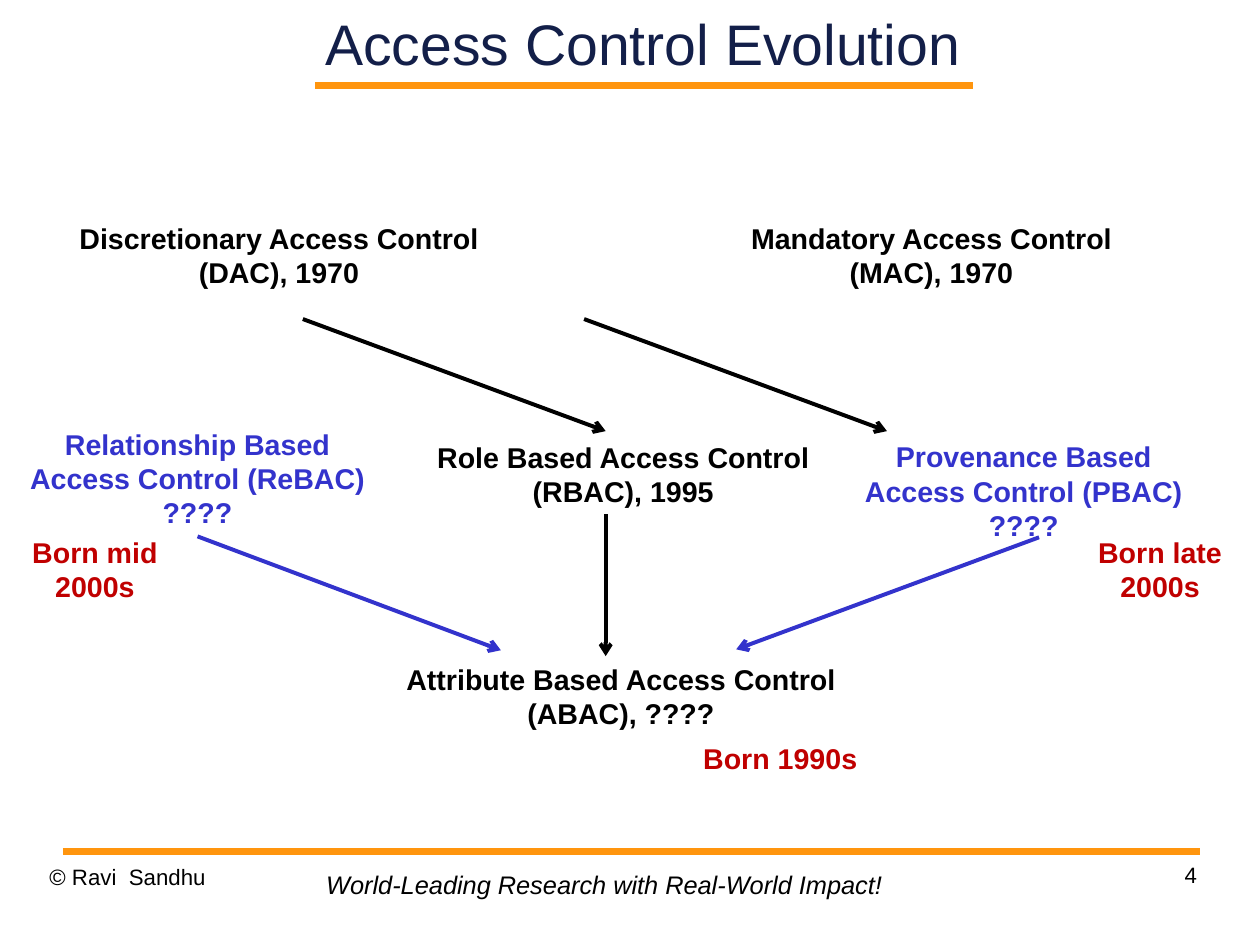
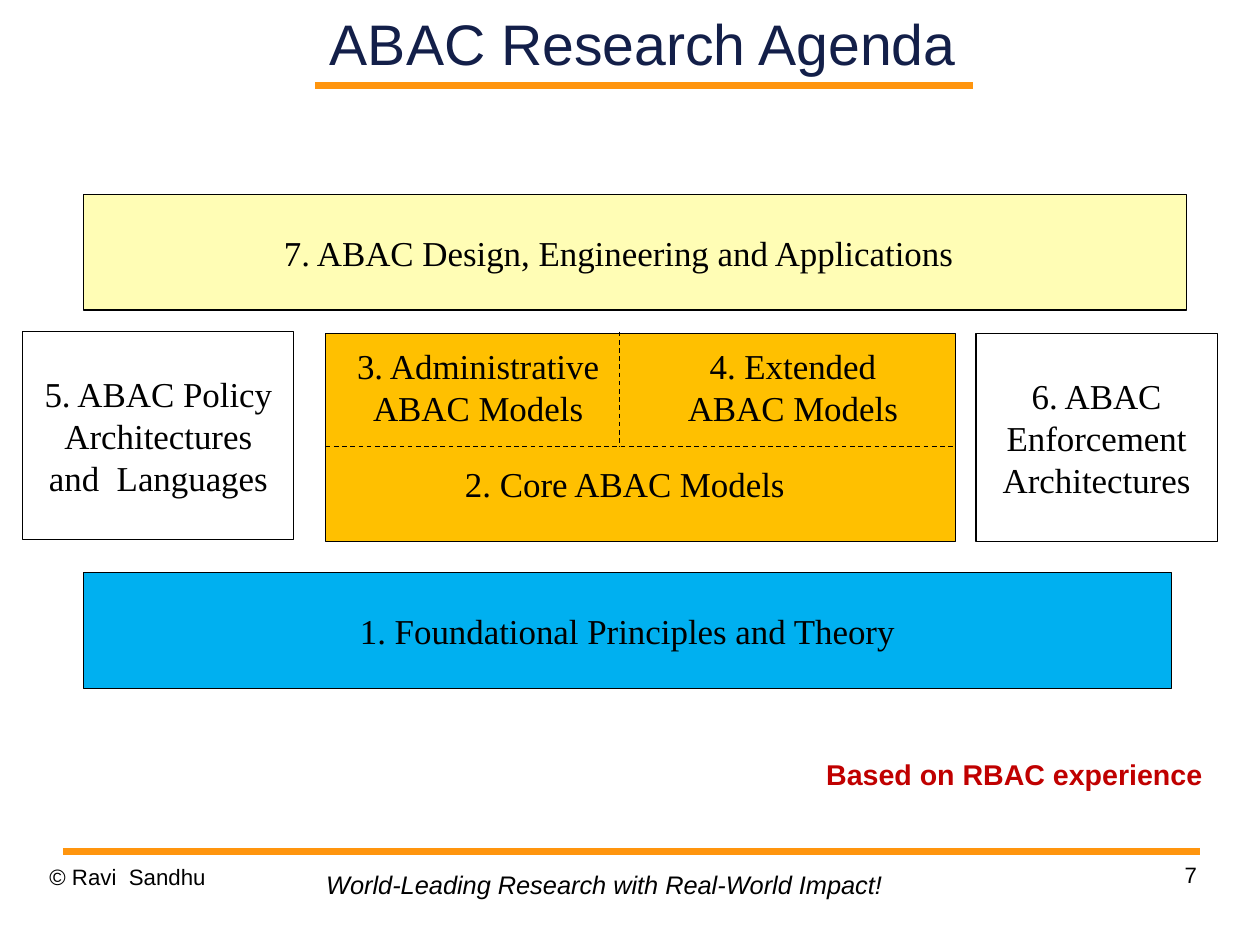
import dataclasses

import pptx
import pptx.dml.color
import pptx.enum.dml
import pptx.enum.shapes
import pptx.enum.text
import pptx.oxml.ns
import pptx.oxml.xmlchemy
import pptx.util

Cm = pptx.util.Cm
ALIGN = pptx.enum.text.PP_ALIGN
ANCHOR = pptx.enum.text.MSO_ANCHOR


@dataclasses.dataclass(frozen=True)
class TextStyle:
    size: float
    color: str = "000000"
    font: str = "Arial"
    bold: bool = False
    italic: bool = False


@dataclasses.dataclass(frozen=True)
class Theme:
    black: str = "000000"
    white: str = "FFFFFF"
    blue: str = "3333CC"
    orange: str = "FF950E"
    amber: str = "FFC000"
    sky: str = "00B0F0"
    cream: str = "FFFDB5"
    rule_width: float = 4.31
    arrow_width: float = 2.5
    border_width: float = 0.75
    title: TextStyle = TextStyle(36, "131F49")
    footer: TextStyle = TextStyle(14)
    tagline: TextStyle = TextStyle(16, italic=True)
    model: TextStyle = TextStyle(18, bold=True)
    emerging: TextStyle = TextStyle(18, "3333CC", bold=True)
    note: TextStyle = TextStyle(18, "C00000", bold=True)
    block: TextStyle = TextStyle(22, font="Times New Roman")


THEME = Theme()
NO_INSETS = (0, 0, 0, 0)
TEXT_INSETS = (0.25, 0.13, 0.25, 0.13)
BLOCK_INSETS = (0.38, 0.15, 0.38, 0.15)


def rgb(color):
    return pptx.dml.color.RGBColor.from_string(color)


def write_text(shape, lines, style, align, anchor, insets):
    """Fill a shape with one paragraph per line; insets are left, top, right, bottom in cm."""
    frame = shape.text_frame
    frame.word_wrap = True
    frame.auto_size = pptx.enum.text.MSO_AUTO_SIZE.NONE
    frame.vertical_anchor = anchor
    (frame.margin_left, frame.margin_top,
     frame.margin_right, frame.margin_bottom) = map(Cm, insets)
    for index, line in enumerate(lines):
        paragraph = frame.add_paragraph() if index else frame.paragraphs[0]
        paragraph.alignment = align
        run = paragraph.add_run()
        run.text = line
        font = run.font
        font.name = style.font
        font.size = pptx.util.Pt(style.size)
        font.bold = style.bold
        font.italic = style.italic
        font.color.rgb = rgb(style.color)


def add_text(slide, box, lines, style, align=ALIGN.CENTER, insets=TEXT_INSETS):
    shape = slide.shapes.add_textbox(*map(Cm, box))
    write_text(shape, lines, style, align, ANCHOR.TOP, insets)
    return shape


def add_block(slide, box, fill, lines=(), insets=BLOCK_INSETS):
    shape = slide.shapes.add_shape(
        pptx.enum.shapes.MSO_SHAPE.RECTANGLE, *map(Cm, box))
    shape.shadow.inherit = False
    shape.fill.solid()
    shape.fill.fore_color.rgb = rgb(fill)
    shape.line.color.rgb = rgb(THEME.black)
    shape.line.width = pptx.util.Pt(THEME.border_width)
    write_text(shape, lines, THEME.block, ALIGN.CENTER, ANCHOR.MIDDLE, insets)


def add_line(slide, start, end, color, width):
    connector = slide.shapes.add_connector(
        pptx.enum.shapes.MSO_CONNECTOR.STRAIGHT, *map(Cm, start + end))
    connector.line.color.rgb = rgb(color)
    connector.line.width = pptx.util.Pt(width)
    properties = connector.element.spPr
    properties.append(pptx.oxml.xmlchemy.OxmlElement("a:effectLst"))
    return connector


def add_arrow(slide, start, end, color=THEME.black):
    connector = add_line(slide, start, end, color, THEME.arrow_width)
    head = pptx.oxml.xmlchemy.OxmlElement("a:tailEnd")
    head.set("type", "arrow")
    connector.element.spPr.find(pptx.oxml.ns.qn("a:ln")).append(head)
    return connector


def add_divider(slide, start, end):
    connector = add_line(slide, start, end, THEME.black, THEME.border_width)
    connector.line.dash_style = pptx.enum.dml.MSO_LINE.DASH


def add_framed_slide(presentation, title, number):
    """Add a slide with its title, orange rules and footer."""
    layout = presentation.slide_layouts.get_by_name("Title Only")
    slide = presentation.slides.add_slide(layout)
    heading = slide.shapes.title
    heading.left, heading.top, heading.width, heading.height = map(
        Cm, (6.12, 0, 16.33, 1.9))
    write_text(heading, [title], THEME.title, ALIGN.CENTER, ANCHOR.MIDDLE, NO_INSETS)
    for left, right, y in ((7, 21.62, 1.9), (1.4, 26.67, 18.92)):
        add_line(slide, (left, y), (right, y), THEME.orange, THEME.rule_width)
    add_text(slide, (1.1, 19.18, 6.53, 1.45), ["© Ravi  Sandhu"],
             THEME.footer, ALIGN.LEFT, NO_INSETS)
    add_text(slide, (7, 19.18, 13.2, 0.94),
             ["World-Leading Research with Real-World Impact!"],
             THEME.tagline, ALIGN.LEFT)
    add_text(slide, (20.07, 19.13, 6.53, 1.45), [str(number)],
             THEME.footer, ALIGN.RIGHT, NO_INSETS)
    return slide


def build_evolution(presentation):
    slide = add_framed_slide(presentation, "Access Control Evolution", 4)
    for box, text in (
        ((1.45, 4.78, 9.5, 1.8), "Discretionary Access Control (DAC), 1970"),
        ((15.95, 4.78, 9.5, 1.8), "Mandatory Access Control (MAC), 1970"),
        ((9.1, 9.65, 9.5, 1.8), "Role Based Access Control (RBAC), 1995"),
        ((8.58, 14.58, 10.44, 1.8), "Attribute Based Access Control (ABAC), ????"),
    ):
        add_text(slide, box, [text], THEME.model)
    relationship = add_text(
        slide, (0.36, 9.35, 8.06, 2.57),
        ["Relationship Based", "Access Control (ReBAC) ????"], THEME.emerging)
    add_text(slide, (18.85, 9.63, 7.8, 2.57),
             ["Provenance Based", "Access Control (PBAC)", "????"], THEME.emerging)
    for box, lines in (
        ((0.31, 11.76, 3.6, 1.8), ["Born mid", "2000s"]),
        ((23.98, 11.76, 3.6, 1.8), ["Born late", "2000s"]),
        ((15.24, 16.33, 4.2, 1), ["Born 1990s"]),
    ):
        add_text(slide, box, lines, THEME.note)

    add_arrow(slide, (6.73, 7.09), (13.46, 9.58))
    add_arrow(slide, (12.98, 7.09), (19.71, 9.58))
    add_arrow(slide, (13.46, 11.43), (13.46, 14.58))
    add_arrow(slide, (23.09, 11.94), (16.36, 14.43), THEME.blue)
    from_relationship = add_arrow(slide, (4.39, 11.92), (11.13, 14.45), THEME.blue)
    from_relationship.begin_connect(relationship, 2)


def build_agenda(presentation):
    slide = add_framed_slide(presentation, "ABAC Research Agenda", 7)
    add_block(slide, (1.85, 4.32, 24.51, 2.57), THEME.cream,
              ["7. ABAC Design, Engineering and Applications"],
              insets=(0.38, 0.15, 1.1, 0.15))
    add_block(slide, (0.51, 7.37, 6.02, 4.62), THEME.white,
              ["5. ABAC Policy", "Architectures and  Languages"])
    add_block(slide, (21.69, 7.42, 5.36, 4.62), THEME.white,
              ["6. ABAC Enforcement Architectures"])
    add_block(slide, (1.85, 12.73, 24.18, 2.57), THEME.sky,
              ["1. Foundational Principles and Theory"])

    add_block(slide, (7.24, 7.42, 14, 4.62), THEME.amber)
    for box, lines in (
        ((7.7, 10.16, 12.37, 1.22), ["2. Core ABAC Models"]),
        ((7.49, 7.52, 6.27, 2.16), ["3. Administrative", "ABAC Models"]),
        ((14.71, 7.52, 5.82, 2.16), ["4. Extended", "ABAC Models"]),
    ):
        add_text(slide, box, lines, THEME.block)
    add_divider(slide, (7.24, 9.93), (21.24, 9.93))
    add_divider(slide, (13.77, 7.37), (13.77, 9.93))

    add_text(slide, (18.11, 16.69, 9.3, 1), ["Based on RBAC experience"],
             THEME.note, ALIGN.LEFT)


def main():
    presentation = pptx.Presentation()
    presentation.slide_width = Cm(28)
    presentation.slide_height = Cm(21)
    build_evolution(presentation)
    build_agenda(presentation)
    presentation.save("out.pptx")


if __name__ == "__main__":
    main()
